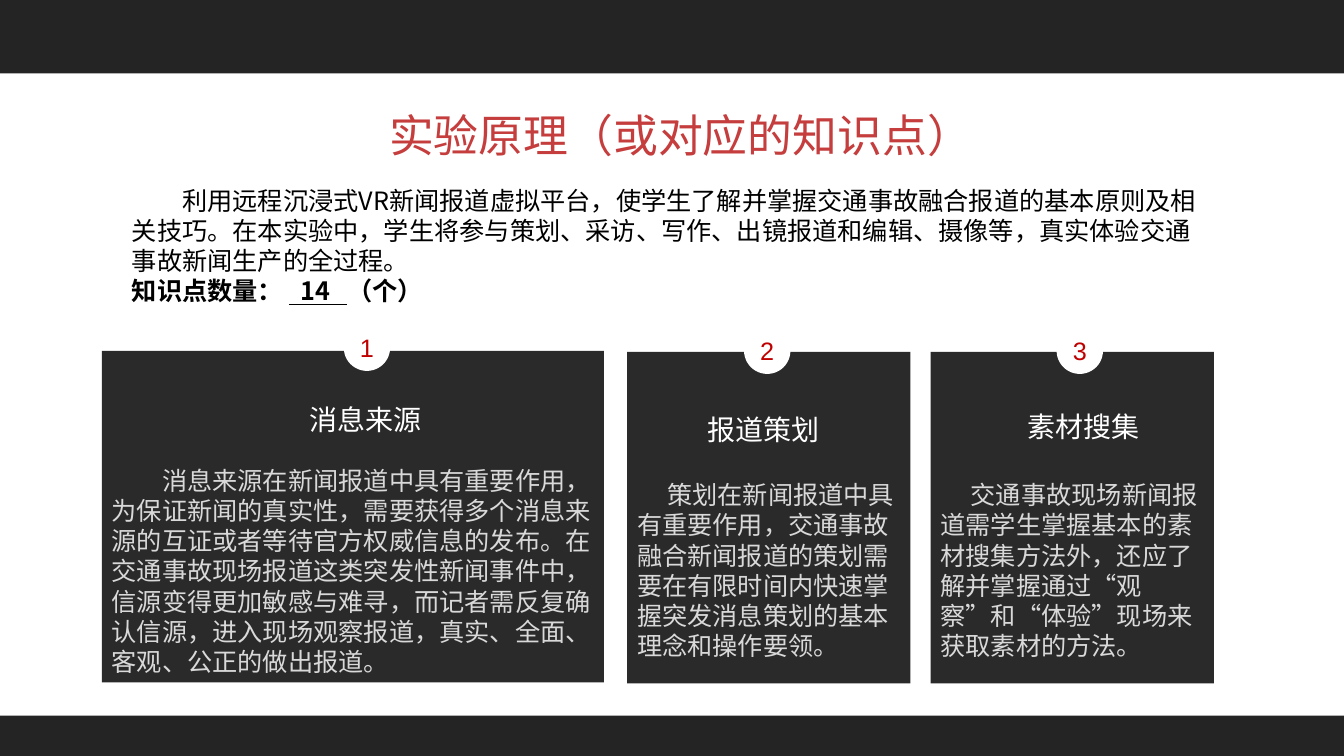
"""Build the slide on the principles of the news reporting experiment."""
from dataclasses import dataclass

import pptx
import pptx.dml.color
import pptx.enum.shapes
import pptx.enum.text
import pptx.oxml
import pptx.oxml.ns
import pptx.util

Inches = pptx.util.Inches
Pt = pptx.util.Pt
RGBColor = pptx.dml.color.RGBColor
Shapes = pptx.enum.shapes.MSO_SHAPE
Align = pptx.enum.text.PP_ALIGN
Anchor = pptx.enum.text.MSO_ANCHOR

BAND = RGBColor(0x24, 0x24, 0x24)
CARD = RGBColor(0x2B, 0x2A, 0x2A)
WHITE = RGBColor(0xFF, 0xFF, 0xFF)
BLACK = RGBColor(0, 0, 0)
TITLE_RED = RGBColor(0xC5, 0x3D, 0x3D)
NUMBER_RED = RGBColor(0xC0, 0, 0)
BODY_GREY = RGBColor(0xD9, 0xD9, 0xD9)

SANS = "Noto Sans CJK SC"
TITLE_FONT = "Noto Sans CJK JP"
SLIDE_WIDTH = 13.33
BADGE_SIZE = 0.46


@dataclass(frozen=True)
class Box:
    left: float
    top: float
    width: float
    height: float

    def lengths(self) -> list:
        return [Inches(value) for value in (self.left, self.top, self.width, self.height)]


@dataclass(frozen=True)
class TextStyle:
    size: float
    color: RGBColor
    font: str = SANS
    line_spacing: float = 21.5
    align: Align = Align.LEFT
    indent: float = 0


@dataclass(frozen=True)
class Topic:
    heading: str
    body: str
    card: Box
    badge_left: float
    badge_top: float
    heading_left: float
    heading_top: float
    text_offset: float
    indent: float


TITLE_STYLE = TextStyle(32, TITLE_RED, TITLE_FONT, 38)
HEADING_STYLE = TextStyle(20, WHITE, line_spacing=24)
NUMBER_STYLE = TextStyle(18, NUMBER_RED, "Arial", 20.5, Align.CENTER)

TOPICS = [
    Topic("消息来源",
          "消息来源在新闻报道中具有重要作用，为保证新闻的真实性，需要获得多个消息来源的互证或者等待官方权威信息的发布。"
          "在交通事故现场报道这类突发性新闻事件中，信源变得更加敏感与难寻，而记者需反复确认信源，进入现场观察报道，"
          "真实、全面、客观、公正的做出报道。",
          Box(1.01, 3.48, 4.98, 3.29), 3.41, 3.22, 2.97, 3.94, 1.14, 0.5),
    Topic("报道策划",
          "策划在新闻报道中具有重要作用，交通事故融合新闻报道的策划需要在有限时间内快速掌握突发消息策划的基本理念和操作要领。",
          Box(6.22, 3.49, 2.81, 3.29), 7.38, 3.25, 6.92, 4.04, 1.27, 0.3),
    Topic("素材搜集",
          "交通事故现场新闻报道需学生掌握基本的素材搜集方法外，还应了解并掌握通过“观察”和“体验”现场来获取素材的方法。",
          Box(9.23, 3.49, 2.81, 3.29), 10.48, 3.25, 10.09, 4.01, 1.27, 0.3),
]

INTRO = ("利用远程沉浸式VR新闻报道虚拟平台，使学生了解并掌握交通事故融合报道的基本原则及相关技巧。"
         "在本实验中，学生将参与策划、采访、写作、出镜报道和编辑、摄像等，真实体验交通事故新闻生产的全过程。")


def format_object(target, values: dict) -> None:
    for name, value in values.items():
        setattr(target, name, value)


def prepare_frame(shape, **values) -> None:
    format_object(shape.text_frame, {
        "word_wrap": True, "vertical_anchor": Anchor.TOP,
        "margin_left": Inches(0.1), "margin_right": Inches(0.1),
        "margin_top": Inches(0.05), "margin_bottom": Inches(0.05), **values})


def format_paragraph(paragraph, style: TextStyle) -> None:
    format_object(paragraph, {"alignment": style.align, "line_spacing": Pt(style.line_spacing)})
    if style.indent:
        paragraph._p.get_or_add_pPr().set("indent", str(Inches(style.indent)))


def add_run(paragraph, text: str, style: TextStyle, **values) -> None:
    run = paragraph.add_run()
    run.text = text
    format_object(run.font, {"size": Pt(style.size), "name": style.font, **values})
    run.font.color.rgb = style.color
    east_asian = pptx.oxml.parse_xml(
        f'<a:ea {pptx.oxml.ns.nsdecls("a")} typeface="{style.font}"/>')
    run.font._element.find(pptx.oxml.ns.qn("a:latin")).addnext(east_asian)


def write_line(paragraph, text: str, style: TextStyle) -> None:
    format_paragraph(paragraph, style)
    add_run(paragraph, text, style)


def add_block(slide, kind: Shapes, box: Box, color: RGBColor):
    shape = slide.shapes.add_shape(kind, *box.lengths())
    shape.shadow.inherit = False
    shape.fill.solid()
    shape.fill.fore_color.rgb = color
    shape.line.fill.background()
    return shape


def add_title(slide, text: str) -> None:
    title = slide.shapes.title
    format_object(title, dict(zip(("left", "top", "width", "height"),
                                  Box(3.76, 1.02, 6.42, 0.64).lengths())))
    prepare_frame(title)
    write_line(title.text_frame.paragraphs[0], text, TITLE_STYLE)


def add_topic(slide, number: int, topic: Topic) -> None:
    card = add_block(slide, Shapes.RECTANGLE, topic.card, CARD)
    prepare_frame(card, margin_top=Inches(topic.text_offset))
    write_line(card.text_frame.paragraphs[0], topic.body,
               TextStyle(18, BODY_GREY, indent=topic.indent))

    badge_box = Box(topic.badge_left, topic.badge_top, BADGE_SIZE, BADGE_SIZE)
    badge = add_block(slide, Shapes.FLOWCHART_CONNECTOR, badge_box, WHITE)
    prepare_frame(badge, vertical_anchor=Anchor.MIDDLE, margin_left=0, margin_right=0)
    write_line(badge.text_frame.paragraphs[0], str(number), NUMBER_STYLE)

    heading_box = Box(topic.heading_left, topic.heading_top, 1.57, 0.44)
    heading = slide.shapes.add_textbox(*heading_box.lengths())
    prepare_frame(heading)
    write_line(heading.text_frame.paragraphs[0], topic.heading, HEADING_STYLE)


def add_intro(slide) -> None:
    intro = slide.shapes.add_textbox(*Box(1.21, 1.79, 10.91, 1.31).lengths())
    prepare_frame(intro)
    write_line(intro.text_frame.paragraphs[0], INTRO, TextStyle(18, BLACK, indent=0.5))
    count_style = TextStyle(18, BLACK)
    count = intro.text_frame.add_paragraph()
    format_paragraph(count, count_style)
    for text, underline in (("知识点数量： ", False), ("  14   ", True), ("（个）", False)):
        add_run(count, text, count_style, bold=True, underline=underline)


def main() -> None:
    presentation = pptx.Presentation()
    format_object(presentation, {"slide_width": Inches(SLIDE_WIDTH), "slide_height": Inches(7.5)})
    slide = presentation.slides.add_slide(presentation.slide_layouts[5])
    for top, height in ((0, 0.73), (7.1, 0.4)):
        add_block(slide, Shapes.RECTANGLE, Box(0, top, SLIDE_WIDTH, height), BAND)
    add_title(slide, "实验原理（或对应的知识点）")
    for number, topic in enumerate(TOPICS, start=1):
        add_topic(slide, number, topic)
    add_intro(slide)
    presentation.save("out.pptx")


if __name__ == "__main__":
    main()
